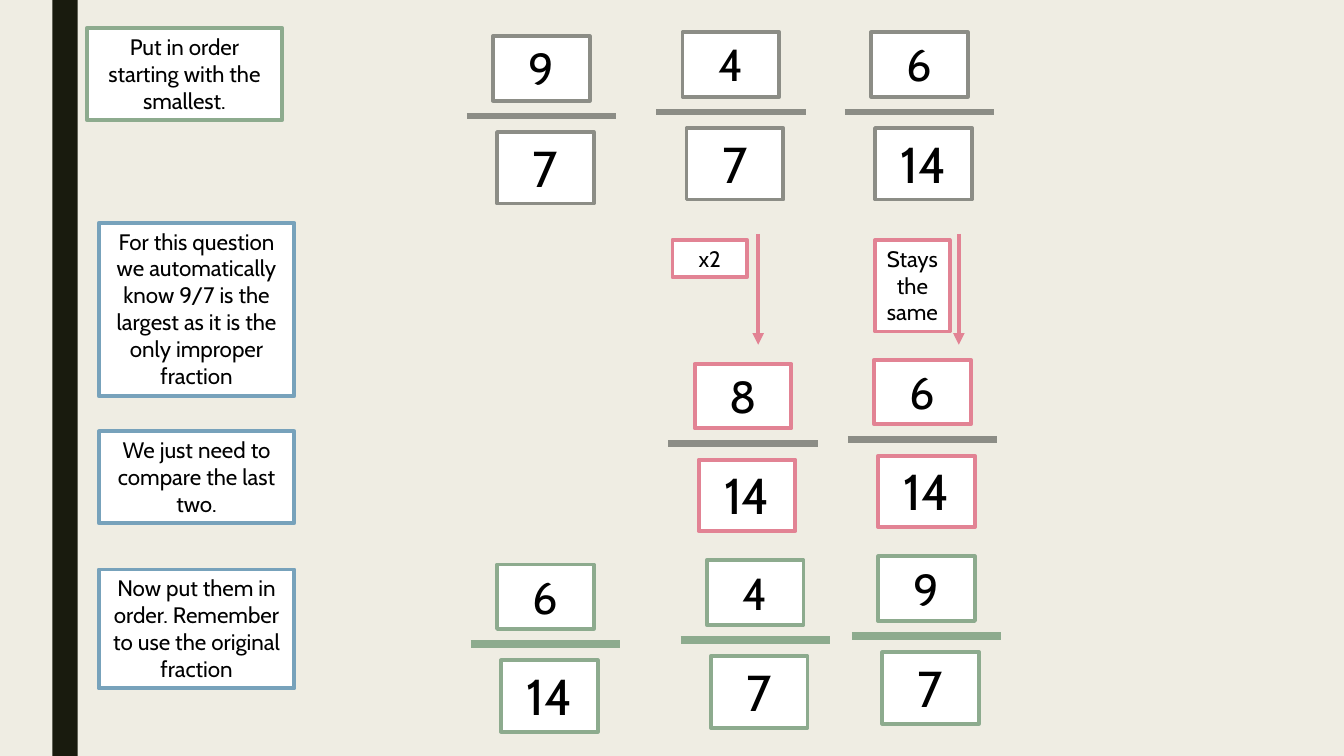
from lxml.etree import SubElement
from pptx import Presentation
from pptx.dml.color import RGBColor
from pptx.enum.shapes import MSO_CONNECTOR as CONN, MSO_SHAPE as SHAPE
from pptx.enum.text import MSO_AUTO_SIZE as AUTO, PP_ALIGN as ALIGN
from pptx.oxml.ns import qn
from pptx.util import Inches, Pt

FONT = "Cabin"
BACKGROUND, SIDEBAR, WHITE, BLACK = "EFEDE3", "191B0E", "FFFFFF", "000000"
GREY, GREEN, BLUE, PINK = "8C8D86", "8DAB8E", "77A2BB", "E28394"
BOX_LINE = 2.75

# left, top, width, height, text, line colour
NOTES = [
    (0.86, 0.28, 1.94, 0.91, "Put in order starting with the smallest.", GREEN),
    (0.98, 2.21, 1.94, 1.72, "For this question we automatically know 9/7 is "
     "the largest as it is the only improper fraction", BLUE),
    (0.98, 4.28, 1.94, 0.91, "We just need to compare the last two.", BLUE),
    (0.98, 5.65, 1.94, 1.18, "Now put them in order. Remember to use the "
     "original fraction", BLUE),
    (6.67, 2.38, 0.74, 0.37, "x2", PINK),
    (8.68, 2.38, 0.74, 0.91, "Stays the same", PINK),
]

# left, top, numerator, denominator, box colour, bar colour, bar width
FRACTIONS = [
    (4.63, 0.36, "9", "7", GREY, GREY, 4.5),
    (6.51, 0.32, "4", "7", GREY, GREY, 4.5),
    (8.38, 0.32, "6", "14", GREY, GREY, 4.5),
    (6.63, 3.61, "8", "14", PINK, GREY, 4.5),
    (8.41, 3.57, "6", "14", PINK, GREY, 4.5),
    (4.67, 5.6, "6", "14", GREEN, GREEN, 6),
    (6.75, 5.56, "4", "7", GREEN, GREEN, 6),
    (8.45, 5.52, "9", "7", GREEN, GREEN, 6),
]

ARROWS_X = (7.52, 9.51)


def rgb(color):
    return RGBColor.from_string(color)


def fill(target, color):
    target.fill.solid()
    target.fill.fore_color.rgb = rgb(color)


def add_box(shapes, x, y, w, h, text, color, size=16):
    sp = shapes.add_textbox(Inches(x), Inches(y), Inches(w), Inches(h))
    fill(sp, WHITE)
    sp.line.color.rgb = rgb(color)
    sp.line.width = Pt(BOX_LINE)
    tf = sp.text_frame
    tf.word_wrap = True
    tf.auto_size = AUTO.SHAPE_TO_FIT_TEXT
    p = tf.paragraphs[0]
    p.alignment = ALIGN.CENTER
    r = p.add_run()
    r.text = text
    r.font.name = FONT
    r.font.size = Pt(size)
    r.font.color.rgb = rgb(BLACK)


def add_line(shapes, x1, y1, x2, y2, color, width):
    line = shapes.add_connector(CONN.STRAIGHT, Inches(x1), Inches(y1),
                                Inches(x2), Inches(y2))
    line.line.color.rgb = rgb(color)
    line.line.width = Pt(width)
    SubElement(line._element.spPr, qn("a:effectLst"))
    return line


def add_arrow(shapes, x, top, bottom):
    arrow = add_line(shapes, x, top, x, bottom, PINK, BOX_LINE)
    SubElement(arrow.line._get_or_add_ln(), qn("a:tailEnd"), type="triangle")


def add_fraction(shapes, x, y, numerator, denominator, color, bar_color, bar_width):
    group = shapes.add_group_shape().shapes
    add_box(group, x + 0.26, y, 0.96, 0.64, numerator, color, 32)
    add_box(group, x + 0.3, y + 0.95, 0.96, 0.71, denominator, color, 36)
    add_line(group, x, y + 0.79, x + 1.48, y + 0.79, bar_color, bar_width)


def add_sidebar(shapes, height):
    sp = shapes.add_shape(SHAPE.RECTANGLE, Inches(0.52), 0, Inches(0.25), height)
    sp.shadow.inherit = False
    fill(sp, SIDEBAR)
    sp.line.fill.background()


def main():
    prs = Presentation()
    prs.slide_width, prs.slide_height = Inches(13.33), Inches(7.5)
    s = prs.slides.add_slide(prs.slide_layouts[6])
    fill(s.background, BACKGROUND)
    add_sidebar(s.shapes, prs.slide_height)
    for note in NOTES:
        add_box(s.shapes, *note)
    for fraction in FRACTIONS:
        add_fraction(s.shapes, *fraction)
    for x in ARROWS_X:
        add_arrow(s.shapes, x, 2.32, 3.42)
    prs.save("out.pptx")


if __name__ == "__main__":
    main()
